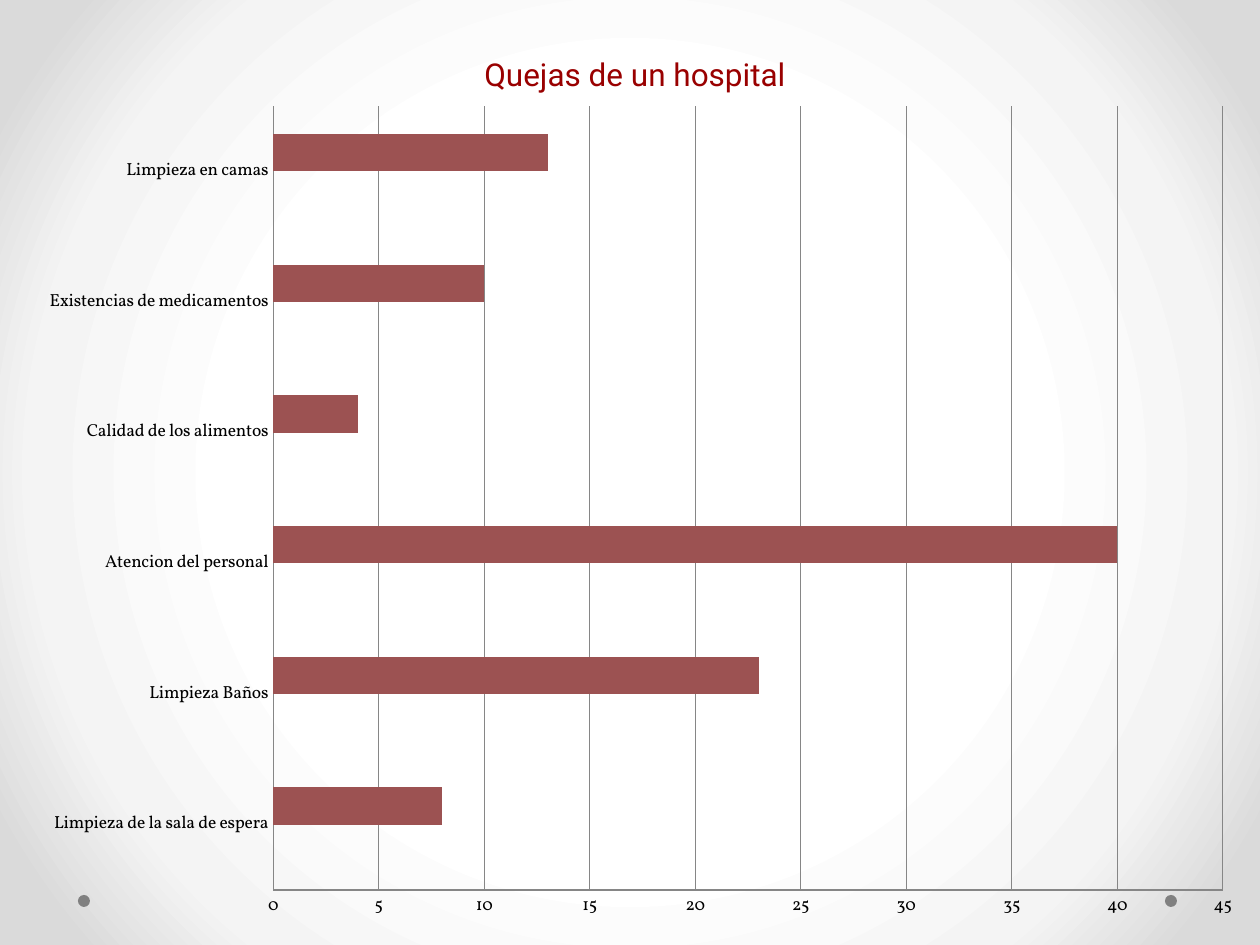
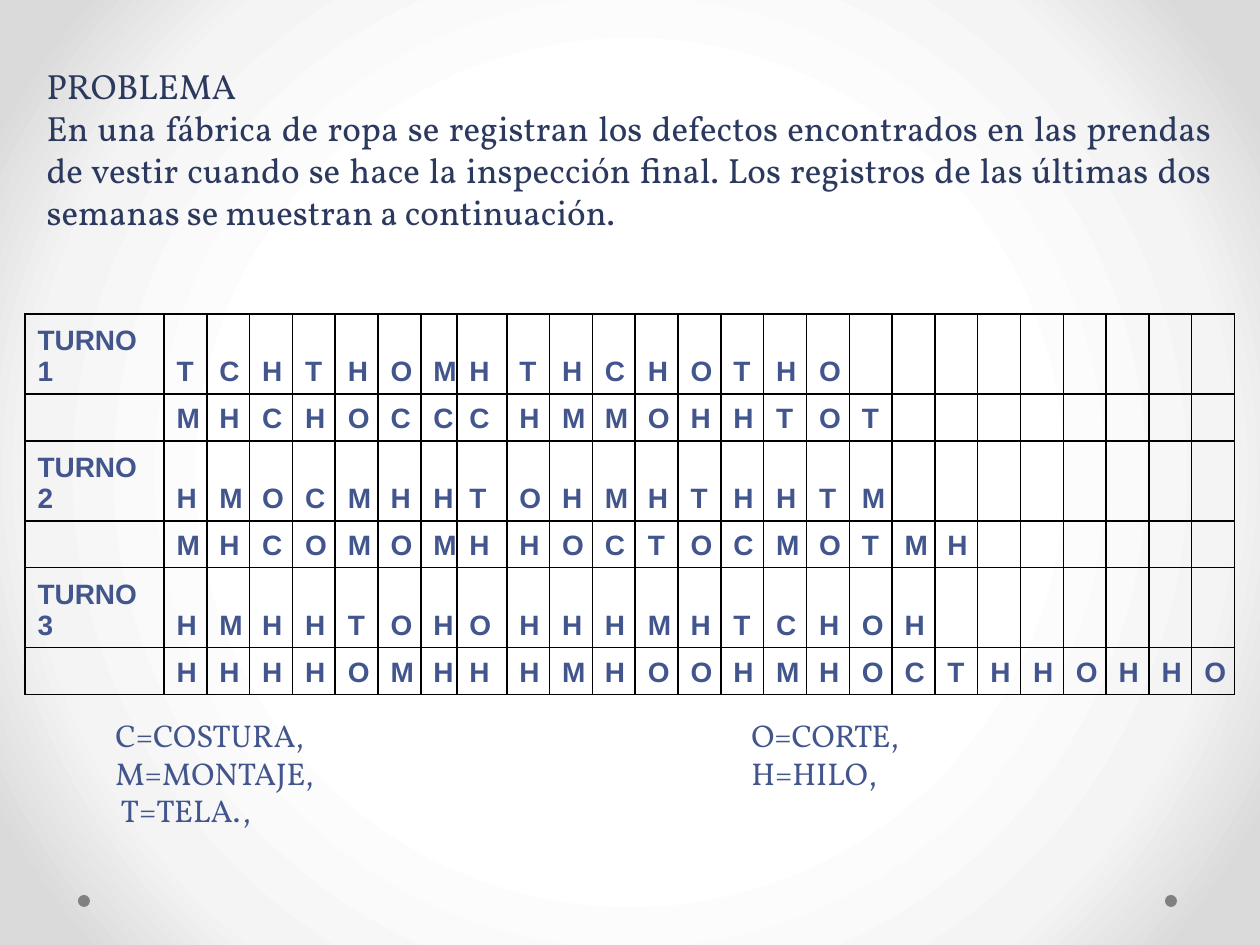
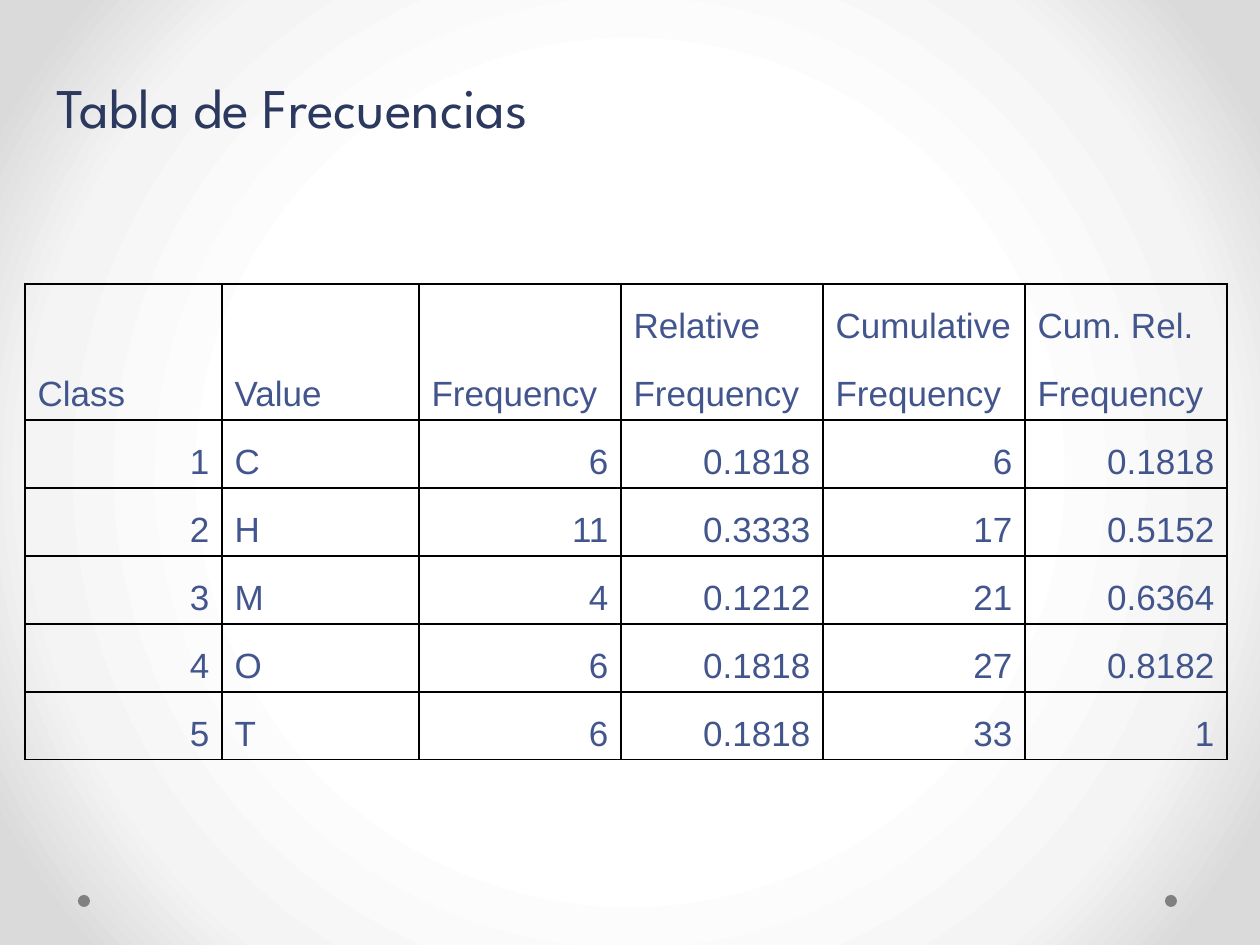
"""Build three slides on quality records: a complaints chart, a defect log and a frequency table."""
from lxml.etree import SubElement
from pptx import Presentation
from pptx.chart.data import CategoryChartData
from pptx.dml.color import RGBColor
from pptx.enum.chart import XL_CHART_TYPE as ChartType, XL_TICK_MARK as Tick
from pptx.enum.shapes import MSO_SHAPE as Preset
from pptx.enum.text import MSO_ANCHOR as Anchor, MSO_AUTO_SIZE as AutoSize, PP_ALIGN as Align
from pptx.oxml import parse_xml
from pptx.oxml.ns import nsdecls, qn
from pptx.util import Emu, Pt

COLORS = {"dot": "808080", "heading": "2C395E", "text": "42568D", "border": "000000",
          "chart_title": "990000", "grid": "868686", "axis": "000000"}
BACKGROUND_STOPS = [(50, "FFFFFF"), (76, "F4F4F4"), (92, "DADADA")]
DOT_LEFTS, DOT_TOP, DOT_SIZE = (78, 1165), 895, 12
NO_TABLE_STYLE = "{2D5ABB26-0587-4C30-8999-92F81FD0307C}"

FORMATS = {
    "problem": {"name": "Vollkorn", "size": 20, "color": "heading"},
    "legend": {"name": "Vollkorn", "size": 18, "color": "text"},
    "title": {"name": "League Spartan", "size": 32, "color": "heading"},
    "shifts": {"name": "Arial", "size": 16, "bold": True, "color": "text"},
    "frequencies": {"name": "Arial", "size": 20, "color": "text"},
    "axis": {"name": "Vollkorn", "size": 10, "color": "axis"},
    "chart_title": {"name": "Roboto", "size": 18, "bold": False, "color": "chart_title"},
}

COMPLAINTS_TITLE = "Quejas de un hospital"
COMPLAINTS = [("Limpieza de la sala de espera", 8), ("Limpieza Baños", 23),
              ("Atencion del personal", 40), ("Calidad de los alimentos", 4),
              ("Existencias de medicamentos", 10), ("Limpieza en camas", 13)]
SERIES_COLORS = ["6076B4", "9C5252"]

PROBLEM = ["PROBLEMA",
           "En una fábrica de ropa se registran los defectos encontrados en las prendas de vestir "
           "cuando se hace la inspección final. Los registros de las últimas dos semanas se "
           "muestran a continuación."]
SHIFT_LOG = [("TURNO 1", "TCHTHOMHTHCHOTHO"), ("", "MHCHOCCCHMMOHHTOT"),
             ("TURNO 2", "HMOCMHHTOHMHTHHTM"), ("", "MHCOMOMHHOCTOCMOTMH"),
             ("TURNO 3", "HMHHTOHOHHHMHTCHOH"), ("", "HHHHOMHHHMHOOHMHOCTHHOHHO")]
DEFECT_CODES = ["C=COSTURA,\tO=CORTE,", "M=MONTAJE,\tH=HILO,", " T=TELA.,"]

FREQUENCY_TITLE = "Tabla de Frecuencias"
FREQUENCIES = [
    ("", "", "", "Relative", "Cumulative", "Cum. Rel."),
    ("Class", "Value", "Frequency", "Frequency", "Frequency", "Frequency"),
    ("1", "C", "6", "0.1818", "6", "0.1818"),
    ("2", "H", "11", "0.3333", "17", "0.5152"),
    ("3", "M", "4", "0.1212", "21", "0.6364"),
    ("4", "O", "6", "0.1818", "27", "0.8182"),
    ("5", "T", "6", "0.1818", "33", "1"),
]


def px(length):
    """Turn pixels into EMU."""
    return Emu(round(length * 914400 / 126))


def apply(target, values):
    """Set each named attribute of the target."""
    for key, value in values.items():
        setattr(target, key, value)


def set_font(font, kind):
    """Give a font the values of one format."""
    for key, value in FORMATS[kind].items():
        if key == "color":
            font.color.rgb = RGBColor.from_string(COLORS[value])
        else:
            setattr(font, key, Pt(value) if key == "size" else value)


def fill_text(shape, paragraphs, kind, box, align=Align.LEFT, anchor=Anchor.TOP):
    """Place a text shape and write its paragraphs."""
    apply(shape, dict(zip(("left", "top", "width", "height"), map(px, box))))
    frame = shape.text_frame
    apply(frame, {"text": "\n".join(paragraphs), "word_wrap": True,
                  "auto_size": AutoSize.NONE, "vertical_anchor": anchor})
    for paragraph in frame.paragraphs:
        paragraph.alignment = align
        for run in paragraph.runs:
            set_font(run.font, kind)


def draw_border(cell, side, visible):
    """Draw or hide one side of a cell."""
    line = SubElement(cell._tc.get_or_add_tcPr(), qn(f"a:ln{side}"), w=str(Pt(1)))
    if visible:
        paint = SubElement(line, qn("a:solidFill"))
        SubElement(paint, qn("a:srgbClr"), val=COLORS["border"])
    else:
        SubElement(line, qn("a:noFill"))


def add_grid(slide, rows, kind, corner, widths, heights, joined_rows=()):
    """Add a bordered table; joined rows share no line between them."""
    table = slide.shapes.add_table(len(rows), len(widths), *map(px, corner),
                                   px(sum(widths)), px(sum(heights))).table
    apply(table, {"first_row": False, "horz_banding": False})
    table._tbl.tblPr.find(qn("a:tableStyleId")).text = NO_TABLE_STYLE
    for column, width in zip(table.columns, widths):
        column.width = px(width)
    for row, height in zip(table.rows, heights):
        row.height = px(height)
    for r, texts in enumerate(rows):
        hidden = {joined_rows[0]: "B", joined_rows[1]: "T"}.get(r) if joined_rows else None
        for c, text in enumerate(texts):
            cell = table.cell(r, c)
            apply(cell, {"text": text, "vertical_anchor": Anchor.BOTTOM})
            paragraph = cell.text_frame.paragraphs[0]
            if text[:1].isdigit():
                paragraph.alignment = Align.RIGHT
            for run in paragraph.runs:
                set_font(run.font, kind)
            if not text:
                SubElement(paragraph._p, qn("a:endParaRPr"), sz=str(FORMATS[kind]["size"] * 100))
            for side in "LRTB":
                draw_border(cell, side, side != hidden)
            cell.fill.background()


def chart_layout(**values):
    """Make a manual layout for a part of a chart."""
    layout = parse_xml(f"<c:layout {nsdecls('c')}><c:manualLayout/></c:layout>")
    for key, value in values.items():
        SubElement(layout[0], qn(f"c:{key}"), val=str(value))
    return layout


def dress_master(prs, slide):
    """Give the master its gradient and its two dots."""
    master = prs.slide_master
    stops = "".join(f'<a:gs pos="{place * 1000}"><a:srgbClr val="{color}"/></a:gs>'
                    for place, color in BACKGROUND_STOPS)
    gradient = parse_xml(
        f'<a:gradFill {nsdecls("a")} rotWithShape="1"><a:gsLst>{stops}</a:gsLst>'
        '<a:path path="circle"><a:fillToRect l="50000" t="50000" r="50000" b="50000"/></a:path>'
        '</a:gradFill>')
    master.background.fill.background()
    properties = master._element.cSld.bg.bgPr
    properties.replace(properties[0], gradient)
    for left in DOT_LEFTS:
        dot = slide.shapes.add_shape(Preset.OVAL, *map(px, (left, DOT_TOP, DOT_SIZE, DOT_SIZE)))
        dot.shadow.inherit = False
        dot.fill.solid()
        dot.fill.fore_color.rgb = RGBColor.from_string(COLORS["dot"])
        dot.line.fill.background()
        master.shapes._spTree.append(dot._element)


def build_complaints(slide):
    """Draw the bar chart of complaints."""
    names, counts = zip(*COMPLAINTS)
    data = CategoryChartData()
    data.categories = names
    data.add_series("Series 1", [None] * len(counts))
    data.add_series("Series 2", counts)
    chart = slide.shapes.add_chart(ChartType.BAR_CLUSTERED, *map(px, (15, 16, 1230, 929)), data).chart
    apply(chart, {"has_legend": False, "has_title": True})
    set_font(chart.font, "axis")

    heading = chart.chart_title
    heading.text_frame.text = COMPLAINTS_TITLE
    set_font(heading.text_frame.paragraphs[0].runs[0].font, "chart_title")
    for old in heading._element.findall(qn("c:layout")):
        heading._element.remove(old)
    heading._element.find(qn("c:tx")).addnext(
        chart_layout(xMode="edge", yMode="edge", x=0.377, y=0.034))
    area = chart._chartSpace.chart.plotArea
    for old in area.findall(qn("c:layout")):
        area.remove(old)
    area.insert(0, chart_layout(layoutTarget="inner", xMode="edge", yMode="edge",
                                x=0.21, y=0.097, w=0.772, h=0.844))

    plot = chart.plots[0]
    apply(plot, {"gap_width": 150, "overlap": 0, "vary_by_categories": False})
    for series, color in zip(plot.series, SERIES_COLORS):
        series.format.fill.solid()
        series.format.fill.fore_color.rgb = RGBColor.from_string(color)
    scale = chart.value_axis
    apply(scale, {"minimum_scale": 0, "maximum_scale": 45, "major_unit": 5,
                  "has_major_gridlines": True})
    for axis in (chart.category_axis, scale):
        apply(axis, {"major_tick_mark": Tick.NONE, "minor_tick_mark": Tick.NONE})
    for part in (chart.category_axis, scale, scale.major_gridlines):
        part.format.line.color.rgb = RGBColor.from_string(COLORS["grid"])
        part.format.line.width = Pt(0.75)


def build_defects(slide):
    """Write the problem, the log of each shift and the defect codes."""
    fill_text(slide.shapes.title, PROBLEM, "problem", (34, 58, 1191, 220), Align.JUSTIFY)
    total, label, seventh, eighth, marks = 1210, 139, 36, 50, 25
    regular = (total - label - seventh - eighth) / (marks - 2)
    widths = [label] + [regular] * 6 + [seventh, eighth] + [regular] * (marks - 8)
    rows = [[shift, *defects, *[""] * (marks - len(defects))] for shift, defects in SHIFT_LOG]
    add_grid(slide, rows, "shifts", (25, 314), widths, [80, 46] * 3)
    codes = slide.shapes.add_textbox(0, 0, 0, 0)
    fill_text(codes, DEFECT_CODES, "legend", (103, 709, 1101, 127), anchor=Anchor.MIDDLE)
    for paragraph in codes.text_frame.paragraphs:
        stops = SubElement(paragraph._p.get_or_add_pPr(), qn("a:tabLst"))
        SubElement(stops, qn("a:tab"), pos=str(px(636)), algn="l")


def build_frequencies(slide):
    """Write the title and the frequency table."""
    fill_text(slide.shapes.title, [FREQUENCY_TITLE], "title", (44, 66, 1131, 81))
    add_grid(slide, FREQUENCIES, "frequencies", (25, 284), [197] * 2 + [202] * 4,
             [68] * len(FREQUENCIES), joined_rows=(0, 1))


def main():
    """Build and save the slides."""
    prs = Presentation()
    apply(prs, {"slide_width": px(1260), "slide_height": px(945)})
    title_only, blank = prs.slide_layouts[5], prs.slide_layouts[6]
    pages = [(blank, build_complaints), (title_only, build_defects), (title_only, build_frequencies)]
    for layout, build in pages:
        build(prs.slides.add_slide(layout))
    dress_master(prs, prs.slides[0])
    prs.save("out.pptx")


if __name__ == "__main__":
    main()
